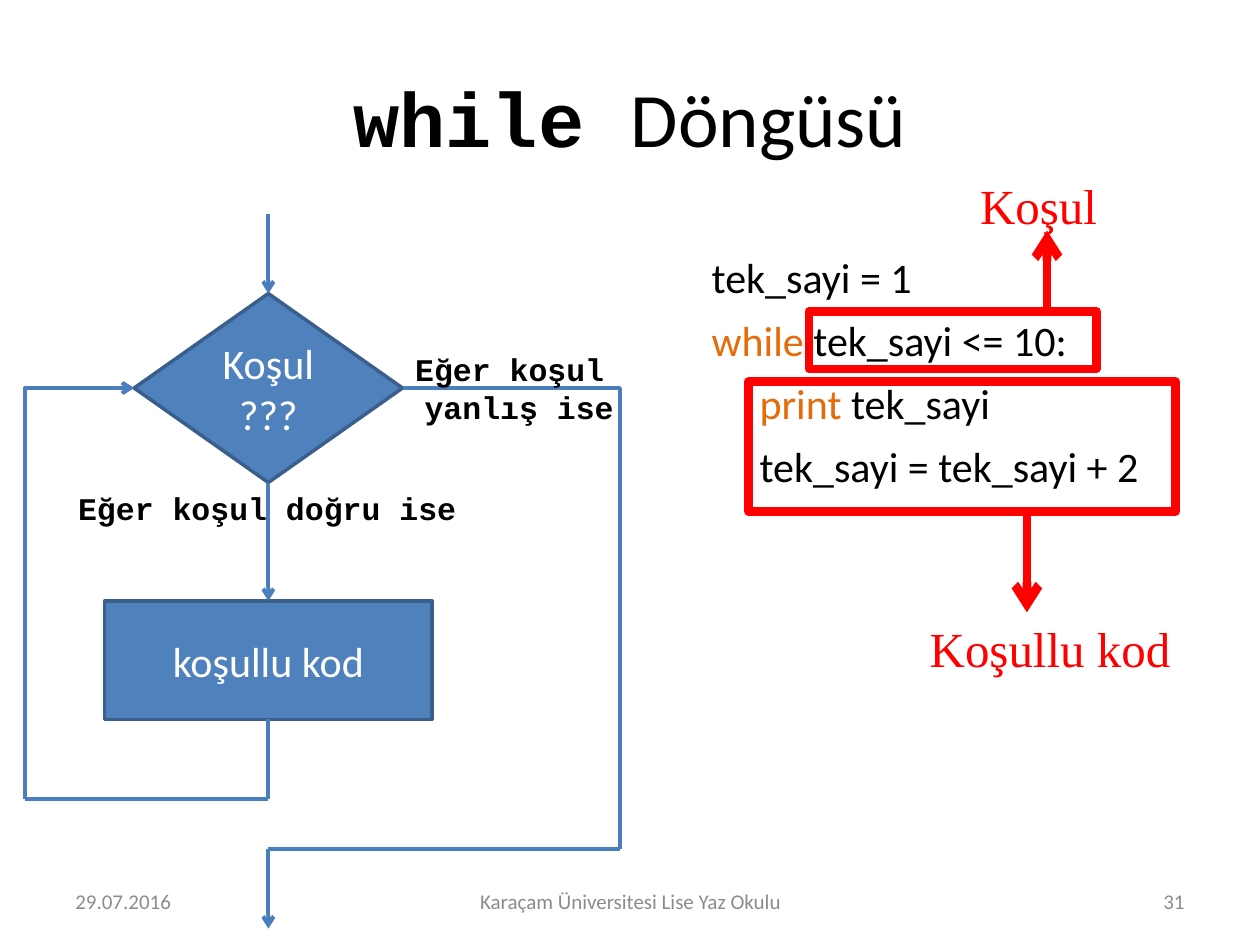
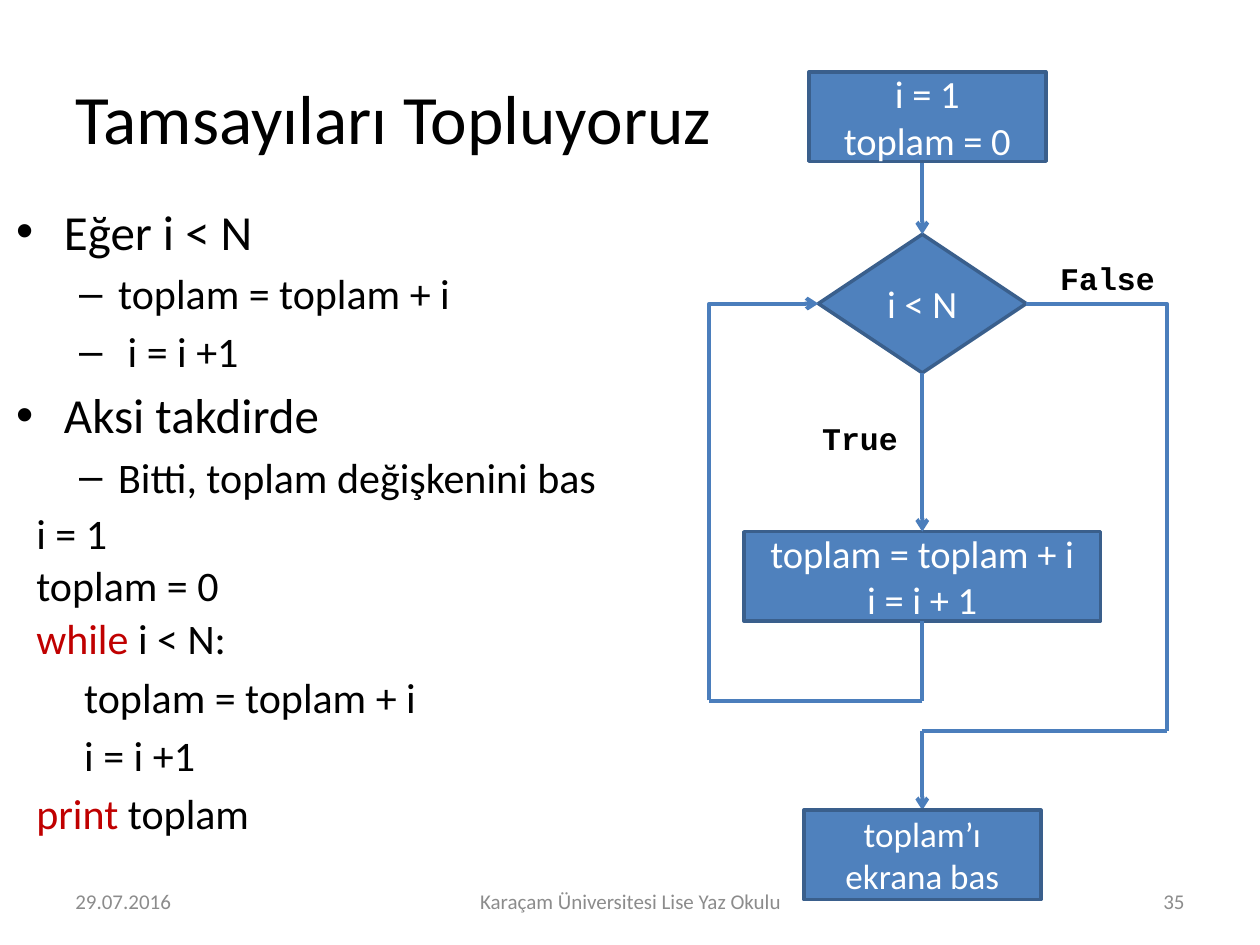
from lxml import etree
from pptx import Presentation
from pptx.dml.color import RGBColor
from pptx.enum import shapes, text
from pptx.oxml import ns
from pptx.util import Inches, Pt

BLACK = RGBColor(0x00, 0x00, 0x00)
WHITE = RGBColor(0xFF, 0xFF, 0xFF)
GRAY = RGBColor(0x8C, 0x8C, 0x8C)
RED = RGBColor(0xFF, 0x00, 0x00)
DARK_RED = RGBColor(0xC0, 0x00, 0x00)
ORANGE = RGBColor(0xE4, 0x6C, 0x0A)
BLUE = RGBColor(0x4F, 0x81, 0xBD)
OUTLINE = RGBColor(0x3A, 0x5F, 0x8C)
FLOW = RGBColor(0x4B, 0x7E, 0xBC)

BODY, CODE, SERIF = "Calibri", "Courier New", "Times New Roman"
LEFT, CENTER, RIGHT = text.PP_ALIGN.LEFT, text.PP_ALIGN.CENTER, text.PP_ALIGN.RIGHT
MIDDLE = text.MSO_ANCHOR.MIDDLE
PRESET = shapes.MSO_SHAPE
STEP = 0.63
LABEL = {"name": CODE, "size": 18, "bold": True}


def inches(*lengths):
    """Convert plain numbers to lengths."""
    return [Inches(length) for length in lengths]


def add_runs(paragraph, runs, formats):
    """Append runs, each a string or a (string, overrides) pair."""
    for item in runs:
        words, changes = (item, {}) if isinstance(item, str) else item
        run = paragraph.add_run()
        run.text = words
        values = {"name": BODY, "size": 24, "color": BLACK, **formats, **changes}
        run.font.color.rgb = values.pop("color")
        values["size"] = Pt(values["size"])
        for name, value in values.items():
            setattr(run.font, name, value)


def write(frame, lines, align=LEFT, **formats):
    """Fill a text frame with one paragraph for each line."""
    for index, line in enumerate(lines):
        paragraph = frame.paragraphs[0] if index == 0 else frame.add_paragraph()
        paragraph.alignment = align
        add_runs(paragraph, [line] if isinstance(line, str) else line, formats)


def add_text(slide, box, lines, align=LEFT, anchor=None, wrap=True, **formats):
    """Add a text box and return its frame."""
    frame = slide.shapes.add_textbox(*inches(*box)).text_frame
    frame.word_wrap = wrap
    frame.vertical_anchor = anchor
    write(frame, lines, align, **formats)
    return frame


def indent(paragraph, size, margin=0.38, hanging=0.38, bullet=None, spacing=1.0):
    """Give a paragraph a hanging indent, spacing and an optional bullet."""
    properties = paragraph._p.get_or_add_pPr()
    properties.set("marL", str(Inches(margin)))
    properties.set("indent", str(-Inches(hanging)))
    paragraph.line_spacing = spacing
    paragraph.space_before = Pt(round(size * 0.18, 1))
    if bullet:
        font = etree.SubElement(properties, ns.qn("a:buFont"))
        font.set("typeface", "Arial")
        etree.SubElement(properties, ns.qn("a:buChar")).set("char", bullet)


def add_box(slide, preset, box, lines=(), fill=BLUE, line=OUTLINE, width=2, size=24):
    """Add an outlined shape with centred text."""
    shape = slide.shapes.add_shape(preset, *inches(*box))
    shape.shadow.inherit = False
    if fill is None:
        shape.fill.background()
    else:
        shape.fill.solid()
        shape.fill.fore_color.rgb = fill
    shape.line.color.rgb = line
    shape.line.width = Pt(width)
    shape.text_frame.vertical_anchor = MIDDLE
    write(shape.text_frame, lines, CENTER, size=size, color=WHITE)


def add_line(slide, start, end, arrow=False, color=FLOW, width=2.25,
             kind=shapes.MSO_CONNECTOR.STRAIGHT):
    """Add a connector, with an arrowhead at its end if asked."""
    connector = slide.shapes.add_connector(kind, *inches(*start, *end))
    connector.line.color.rgb = color
    connector.line.width = Pt(width)
    properties = connector._element.spPr
    if arrow:
        outline = properties.find(ns.qn("a:ln"))
        etree.SubElement(outline, ns.qn("a:tailEnd")).set("type", "arrow")
    etree.SubElement(properties, ns.qn("a:effectLst"))
    return connector


def add_elbow(slide, start, end, upward=False):
    """Add a one-bend connector: across then down, or up then across with an arrow."""
    connector = add_line(slide, start, end, upward, kind=shapes.MSO_CONNECTOR.ELBOW)
    properties = connector._element.spPr
    properties.find(ns.qn("a:prstGeom")).set("prst", "bentConnector2")
    if upward:
        across, rise = end[0] - start[0], start[1] - end[1]
        connector.left = Inches((start[0] + end[0] - rise) / 2)
        connector.top = Inches((start[1] + end[1] - across) / 2)
        connector.width, connector.height = inches(rise, across)
        transform = properties.find(ns.qn("a:xfrm"))
        for name, value in {"rot": "5400000", "flipH": "1", "flipV": "1"}.items():
            transform.set(name, value)


def add_flowchart(slide, box, axis, entry, decision, drop, body, size):
    """Draw a loop: entry, decision, body, the way back and the way out."""
    left, top, width, height = box
    right, bottom = left + width, top + height
    center = left + axis
    question, question_width, question_height = decision
    lines, body_width, body_height = body
    question_top = top + entry
    middle = question_top + question_height / 2
    question_bottom = question_top + question_height
    body_top = question_bottom + drop
    body_bottom = body_top + body_height
    back, leave = body_bottom + STEP, bottom - STEP

    add_box(slide, PRESET.FLOWCHART_DECISION,
            (center - question_width / 2, question_top, question_width, question_height),
            question, size=size)
    add_box(slide, PRESET.FLOWCHART_PROCESS,
            (center - body_width / 2, body_top, body_width, body_height), lines, size=size)
    for start, end, arrow in [
        ((center, top), (center, question_top), True),
        ((center, question_bottom), (center, body_top), True),
        ((center, body_bottom), (center, back), False),
        ((center, back), (left, back), False),
        ((right, leave), (center, leave), False),
        ((center, leave), (center, bottom), True),
    ]:
        add_line(slide, start, end, arrow)
    add_elbow(slide, (center + question_width / 2, middle), (right, leave))
    add_elbow(slide, (left, back), (center - question_width / 2, middle), upward=True)


def add_frame(slide, title, width, align, number, size):
    """Add the title and the three footer texts."""
    add_text(slide, (0.5, 0.3, width, 1.25), [title], align, MIDDLE, size=size)
    for left, span, words, side in [
        (0.5, 2.33, "29.07.2016", LEFT),
        (3.42, 3.17, "Karaçam Üniversitesi Lise Yaz Okulu", CENTER),
        (7.17, 2.33, str(number), RIGHT),
    ]:
        add_text(slide, (left, 6.95, span, 0.4), [words], side, MIDDLE, size=12, color=GRAY)


def add_code(slide, box, lines, spacings):
    """Add program lines with the given line spacings."""
    frame = add_text(slide, box, lines)
    for paragraph, spacing in zip(frame.paragraphs, spacings):
        indent(paragraph, 24, spacing=spacing)


def add_marked_code(slide, left, top):
    """Show the while code with its condition and body marked in red."""
    keyword = {"color": ORANGE}
    add_code(slide, (left, top, 4.26, 2.16), [
        "tek_sayi = 1",
        [("while", keyword), " tek_sayi <= 10:"],
        ["\t", ("print", keyword), " tek_sayi"],
        "\ttek_sayi = tek_sayi + 2",
    ], [1.1] * 4)
    for name, label, mark, start, end in [
        ("Koşul", (2.13, -0.57, 1.73), (0.87, 0.56, 2.28, 0.46), (2.76, 0.54), (2.76, -0.08)),
        ("Koşullu kod", (1.73, 2.95, 2.22), (0.39, 1.12, 3.39, 1.03), (2.6, 2.15), (2.6, 2.95)),
    ]:
        add_text(slide, (left + label[0], top + label[1], label[2], 0.57), [name],
                 name=SERIF, size=28, color=RED)
        add_box(slide, PRESET.RECTANGLE, (left + mark[0], top + mark[1], *mark[2:]),
                fill=None, line=RED, width=5)
        add_line(slide, (left + start[0], top + start[1]), (left + end[0], top + end[1]),
                 True, RED, 5)


def add_outline(slide, box):
    """Add the bulleted plan of the sum."""
    plan = [
        (0, "Eğer i < N"),
        (1, "toplam = toplam + i"),
        (1, " i = i +1"),
        (0, "Aksi takdirde"),
        (1, "Bitti, toplam değişkenini bas"),
    ]
    sizes = [28, 24]
    styles = [{"bullet": "•"}, {"margin": 0.81, "hanging": 0.31, "bullet": "–"}]
    frame = add_text(slide, box, [[(words, {"size": sizes[level]})] for level, words in plan])
    for paragraph, (level, _) in zip(frame.paragraphs, plan):
        indent(paragraph, sizes[level], **styles[level])


def build_while_slide(slide):
    """Build the slide that explains the while loop."""
    title = [("while ", {"name": CODE, "bold": True}), "Döngüsü"]
    add_frame(slide, title, 9, CENTER, 31, 44)
    add_marked_code(slide, 5.55, 1.91)
    add_flowchart(slide, (0.2, 1.7, 4.72, 5.67), 1.93, 0.63, (["Koşul", "???"], 2.13, 1.5),
                  0.94, (["koşullu kod"], 2.6, 0.94), 24)
    add_text(slide, (3.19, 2.73, 1.86, 0.71), ["Eğer koşul ", "yanlış ise"], CENTER,
             wrap=False, **LABEL)
    add_text(slide, (0.51, 3.83, 3.22, 0.4), ["Eğer koşul doğru ise"], CENTER,
             wrap=False, **LABEL)


def build_sum_slide(slide):
    """Build the slide that sums integers."""
    add_frame(slide, "Tamsayıları Topluyoruz", 5.72, LEFT, 35, 39.6)
    add_outline(slide, (0.03, 1.55, 4.93, 2.47))
    keyword = {"color": DARK_RED}
    add_code(slide, (0.19, 4.02, 4.93, 3.11), [
        "i = 1",
        "toplam = 0",
        [("while", keyword), " i < N:"],
        "\ttoplam = toplam + i",
        "\ti = i +1",
        [("print", keyword), " toplam"],
    ], [0.9] * 3 + [1.0] * 3)
    add_flowchart(slide, (5.63, 1.28, 3.63, 5.15), 1.69, 0.58, (["i < N"], 1.65, 1.1),
                  1.26, (["toplam = toplam + i", "i = i + 1"], 2.83, 0.71), 22)
    for left, top, lines, size in [
        (6.42, 0.57, ["i = 1", "toplam = 0"], 22),
        (6.38, 6.43, ["toplam’ı ekrana bas"], 20),
    ]:
        add_box(slide, PRESET.FLOWCHART_PROCESS, (left, top, 1.88, 0.71), lines, size=size)
    for box, word in [((8.31, 2.01, 0.96, 0.4), "False"), ((6.42, 3.28, 0.81, 0.4), "True")]:
        add_text(slide, box, [word], CENTER, wrap=False, **LABEL)


def main():
    """Build and save the presentation."""
    presentation = Presentation()
    presentation.slide_width, presentation.slide_height = inches(10, 7.5)
    for build in (build_while_slide, build_sum_slide):
        build(presentation.slides.add_slide(presentation.slide_layouts[6]))
    presentation.save("out.pptx")


if __name__ == "__main__":
    main()
